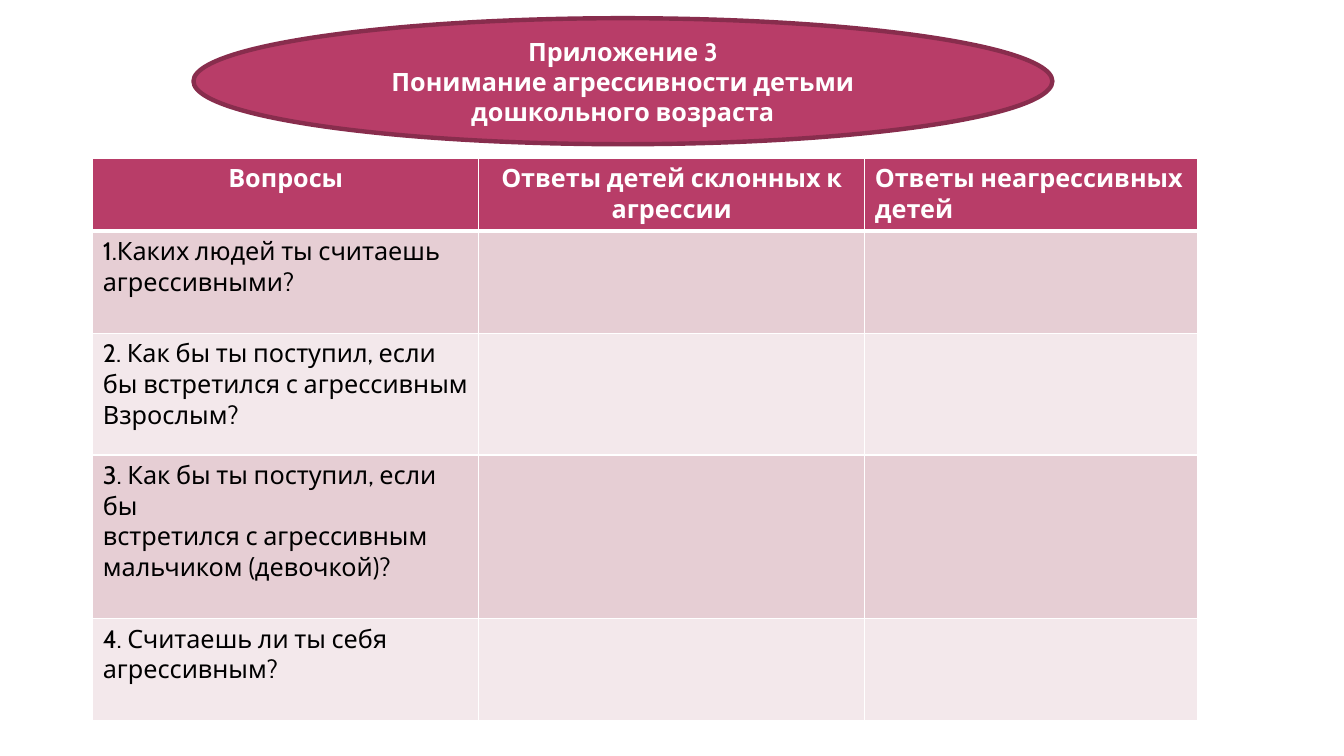
from dataclasses import dataclass

from lxml import etree
from pptx import Presentation
from pptx.dml.color import RGBColor
from pptx.enum.shapes import MSO_SHAPE
from pptx.enum.text import MSO_ANCHOR, PP_ALIGN
from pptx.oxml.ns import qn
from pptx.util import Pt

OVAL = MSO_SHAPE.OVAL
MIDDLE = MSO_ANCHOR.MIDDLE
LEFT, CENTER = PP_ALIGN.LEFT, PP_ALIGN.CENTER


@dataclass(frozen=True)
class Theme:
    accent: str = "B83D68"
    edge: str = "882D4D"
    bands: tuple = ("E6CED4", "F3E8EB")
    light: str = "FFFFFF"
    dark: str = "000000"
    font: str = "Cabin"
    size: float = 18


THEME = Theme()
HEAD = {"name": THEME.font, "size": Pt(THEME.size), "bold": True}
BODY = {**HEAD, "bold": False}

TITLE = ["Приложение 3", "Понимание агрессивности детьми дошкольного возраста"]
LABELS = [
    ("Вопросы", CENTER),
    ("Ответы детей склонных к агрессии", CENTER),
    ("Ответы неагрессивных детей", LEFT),
]
# Each question: row height and its paragraphs
ASKED = [
    (73, ["1.Каких людей ты считаешь агрессивными?"]),
    (87, ["2. Как бы ты поступил, если бы встретился с агрессивным", "Взрослым?"]),
    (117, ["3. Как бы ты поступил, если бы",
           "встретился с агрессивным мальчиком (девочкой)?"]),
    (73, ["4. Считаешь ли ты себя агрессивным?"]),
]
HEAD_ROW = 52
SHARES = (3.83, 3.83, 3.3)


def paint(fill, color):
    fill.solid()
    fill.fore_color.rgb = RGBColor.from_string(color)


def write(frame, lines, style, color, align):
    frame.text = "\n".join(lines)
    for para in frame.paragraphs:
        para.alignment = align
        for run in para.runs:
            for key, value in style.items():
                setattr(run.font, key, value)
            run.font.color.rgb = RGBColor.from_string(color)


def rule(cell, color, below):
    """Draw the four cell borders, with its own width below."""
    props = cell._tc.get_or_add_tcPr()
    widths = {"lnL": 1, "lnR": 1, "lnT": 1, "lnB": below}
    for spot, (tag, width) in enumerate(widths.items()):
        line = etree.Element(qn("a:" + tag), w=str(Pt(width)))
        fill = etree.SubElement(line, qn("a:solidFill"))
        etree.SubElement(fill, qn("a:srgbClr"), val=color)
        props.insert(spot, line)


def add_title(slide, left, top, width, height):
    oval = slide.shapes.add_shape(OVAL, Pt(left), Pt(top), Pt(width), Pt(height))
    oval.shadow.inherit = False
    paint(oval.fill, THEME.accent)
    paint(oval.line.fill, THEME.edge)
    oval.line.width = Pt(3.15)
    oval.text_frame.word_wrap = True
    oval.text_frame.vertical_anchor = MIDDLE
    write(oval.text_frame, TITLE, HEAD, THEME.light, CENTER)


def add_survey(slide, left, top, width):
    heights = [HEAD_ROW] + [height for height, _ in ASKED]
    table = slide.shapes.add_table(
        len(heights), len(SHARES), Pt(left), Pt(top), Pt(width), Pt(sum(heights))
    ).table
    table.horz_banding = False
    for col, share in zip(table.columns, SHARES):
        col.width = Pt(width * share / sum(SHARES))
    for row, height in zip(table.rows, heights):
        row.height = Pt(height)

    # Fills and borders
    for num, row in enumerate(table.rows):
        color = THEME.bands[(num - 1) % 2] if num else THEME.accent
        for cell in row.cells:
            paint(cell.fill, color)
            rule(cell, THEME.light, 1 if num else 3)

    # Header labels and questions
    for col, (label, align) in enumerate(LABELS):
        write(table.cell(0, col).text_frame, [label], HEAD, THEME.light, align)
    for num, (_, lines) in enumerate(ASKED, 1):
        write(table.cell(num, 0).text_frame, lines, BODY, THEME.dark, LEFT)


def main():
    deck = Presentation()
    deck.slide_width, deck.slide_height = Pt(960), Pt(540)
    slide = deck.slides.add_slide(deck.slide_layouts[6])
    paint(slide.background.fill, THEME.light)
    add_survey(slide, 66.3, 113, 789)
    add_title(slide, 138.2, 13, 613.5, 90)
    deck.save("out.pptx")


if __name__ == "__main__":
    main()
